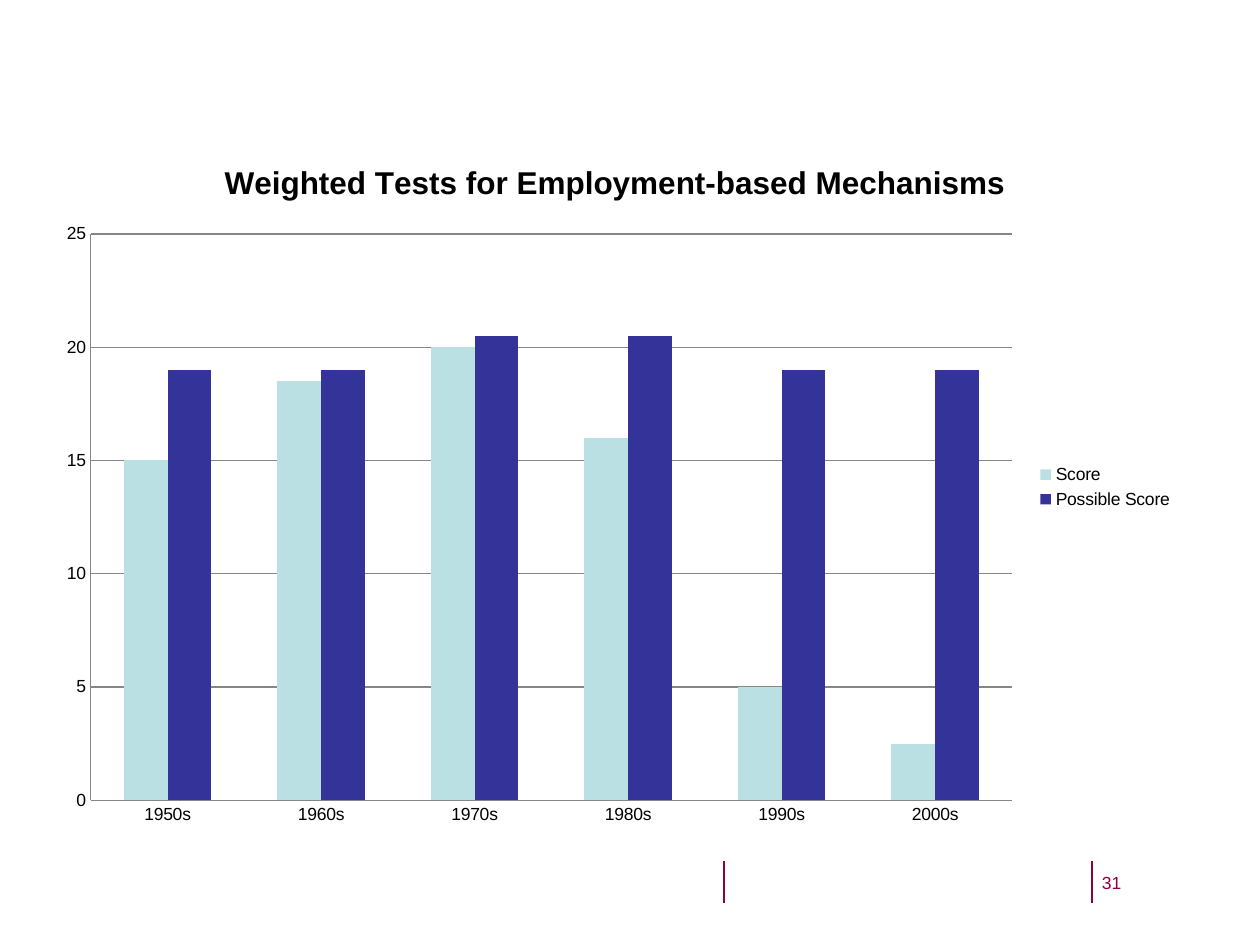
import pptx
import pptx.chart.data
import pptx.dml.color
import pptx.enum.chart
import pptx.enum.shapes
import pptx.oxml.ns
import pptx.util
from lxml import etree

TITLE = "Weighted Tests for Employment-based Mechanisms"
DECADES = ["1950s", "1960s", "1970s", "1980s", "1990s", "2000s"]
SCORES = [
    ("Score", "BBE0E3", [15, 18.5, 20, 16, 5, 2.5]),
    ("Possible Score", "333399", [19, 19, 20.5, 20.5, 19, 19]),
]
PAGE_NUMBER = "31"
FOOTER_RULES = [1092, 724]
FOOTER_TOP, FOOTER_BOTTOM = 861, 903
FONT, BLACK, GREY, MAROON = "Arial", "000000", "868686", "90003E"


def px(length):
    return pptx.util.Emu(round(length * 914400 / 126))


def color(value):
    return pptx.dml.color.RGBColor.from_string(value)


def style(font, size, ink, bold=False):
    font.name = FONT
    font.size = pptx.util.Pt(size)
    font.bold = bold
    font.color.rgb = color(ink)


def outline(line, ink):
    line.color.rgb = color(ink)
    line.width = pptx.util.Pt(0.75)


def add_footer(slide):
    for x in FOOTER_RULES:
        rule = slide.shapes.add_connector(
            pptx.enum.shapes.MSO_CONNECTOR.STRAIGHT,
            px(x), px(FOOTER_TOP), px(x), px(FOOTER_BOTTOM))
        outline(rule.line, MAROON)
        etree.SubElement(rule._element.spPr, pptx.oxml.ns.qn("a:effectLst"))
    number = slide.shapes.add_textbox(px(1102), px(872), px(73), px(54)).text_frame
    number.word_wrap = True
    number.margin_left = number.margin_right = 0
    number.margin_top = number.margin_bottom = 0
    number.text = PAGE_NUMBER
    style(number.paragraphs[0].font, 10, MAROON)


def add_scores(slide):
    data = pptx.chart.data.CategoryChartData()
    data.categories = DECADES
    for name, _, values in SCORES:
        data.add_series(name, values)
    chart = slide.shapes.add_chart(
        pptx.enum.chart.XL_CHART_TYPE.COLUMN_CLUSTERED,
        px(44), px(135), px(1142), px(704), data).chart
    style(chart.font, 10, BLACK)

    chart.has_title = True
    heading = chart.chart_title.text_frame
    heading.text = TITLE
    style(heading.paragraphs[0].font, 18, BLACK, bold=True)
    chart.chart_title.include_in_layout = False

    chart.has_legend = True
    chart.legend.position = pptx.enum.chart.XL_LEGEND_POSITION.RIGHT
    chart.legend.include_in_layout = False

    for axis in (chart.category_axis, chart.value_axis):
        axis.major_tick_mark = pptx.enum.chart.XL_TICK_MARK.NONE
        axis.minor_tick_mark = pptx.enum.chart.XL_TICK_MARK.NONE
        outline(axis.format.line, GREY)
    scale = chart.value_axis
    scale.minimum_scale, scale.maximum_scale, scale.major_unit = 0, 25, 5
    scale.has_major_gridlines = True
    outline(scale.major_gridlines.format.line, GREY)

    columns = chart.plots[0]
    columns.vary_by_categories = False
    columns.gap_width = 150
    columns.overlap = 0
    for series, (_, fill, _) in zip(columns.series, SCORES):
        series.format.fill.solid()
        series.format.fill.fore_color.rgb = color(fill)


def main():
    deck = pptx.Presentation()
    deck.slide_width, deck.slide_height = px(1260), px(945)
    slide = deck.slides.add_slide(deck.slide_layouts[6])
    add_footer(slide)
    add_scores(slide)
    deck.save("out.pptx")


if __name__ == "__main__":
    main()
